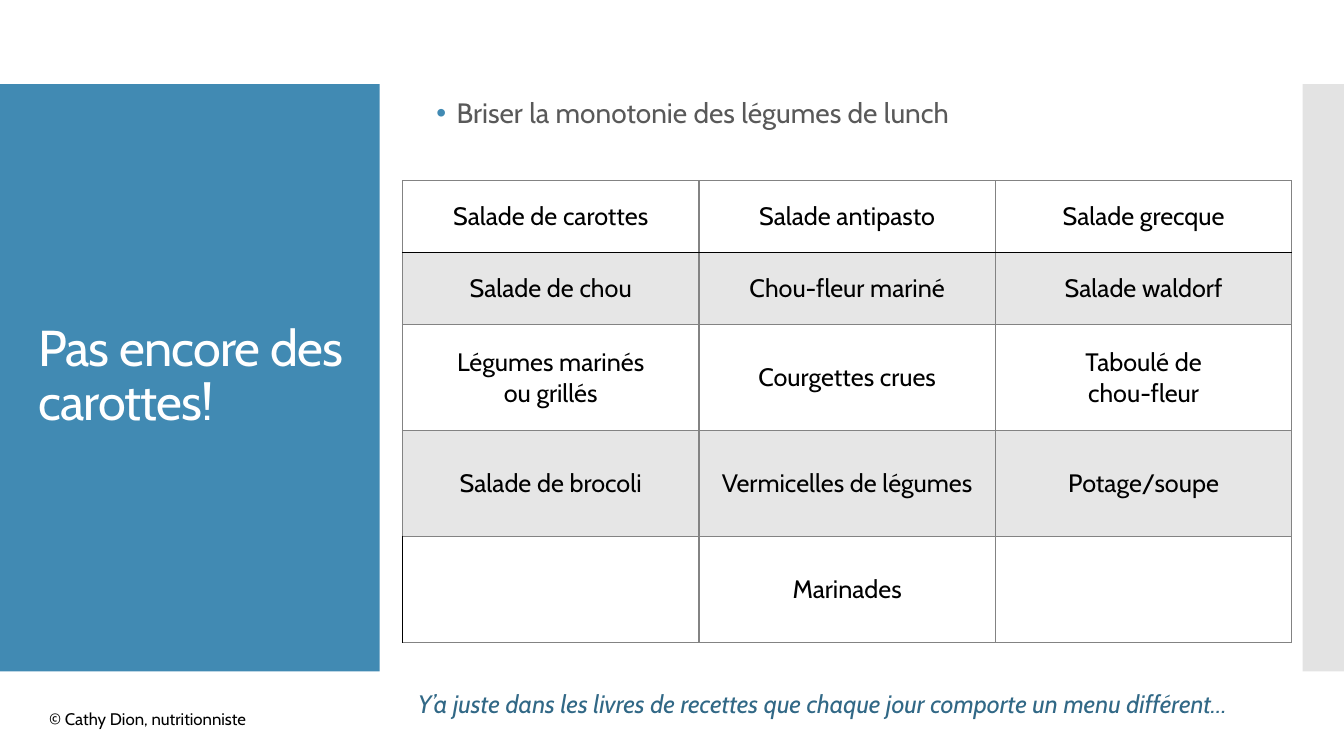
from lxml import etree
from pptx import Presentation
from pptx import util as u
from pptx.dml import color
from pptx.enum import shapes, text
from pptx.oxml import ns

BLUE, GREY, PALE, BLACK = "418AB3", "838383", "E6E6E6", "000000"


def tint(code):
    return color.RGBColor.from_string(code)


class Sheet:
    """Holds the style and the current slide."""

    font = "Cabin"

    def __init__(self, deck):
        self.slide = deck.slides.add_slide(deck.slide_layouts[1])

    def place(self, shape, *box):
        shape.left, shape.top, shape.width, shape.height = map(u.Pt, box)

    def style(self, frame, size, code, italic=False):
        for para in frame.paragraphs:
            for run in para.runs:
                run.font.name, run.font.size = self.font, u.Pt(size)
                run.font.color.rgb, run.font.italic = tint(code), italic

    def panel(self, code, *box):
        shape = self.slide.shapes.add_shape(
            shapes.MSO_SHAPE.RECTANGLE, *map(u.Pt, box))
        shape.shadow.inherit = False
        shape.fill.solid()
        shape.fill.fore_color.rgb = tint(code)
        shape.line.fill.background()
        shape.element.getparent().insert(2, shape.element)

    def holder(self, shape, words, size, code, anchor, *box):
        self.place(shape, *box)
        frame = shape.text_frame
        frame.text = words
        frame.auto_size = text.MSO_AUTO_SIZE.NONE
        frame.vertical_anchor = anchor
        para = frame.paragraphs[0]
        para.line_spacing, para.space_before = 0.9, u.Pt(0)
        para.alignment = text.PP_ALIGN.LEFT
        self.style(frame, size, code)
        return para

    def title(self, words, *box):
        para = self.holder(self.slide.shapes.title, words, 36, "FFFFFF",
                           text.MSO_ANCHOR.MIDDLE, *box)
        para.runs[0].font._element.set("spc", "-60")

    def bullet(self, words, *box):
        para = self.holder(self.slide.placeholders[1], words, 20, "595959",
                           text.MSO_ANCHOR.TOP, *box)
        props = para._p.get_or_add_pPr()
        props.set("marL", str(u.Pt(14.4)))
        props.set("indent", str(u.Pt(-14.4)))
        hue = etree.SubElement(props, ns.qn("a:buClr"))
        etree.SubElement(hue, ns.qn("a:srgbClr"), val=BLUE)
        etree.SubElement(props, ns.qn("a:buChar"), char="•")

    def note(self, words, size, code, italic, *box):
        frame = self.slide.shapes.add_textbox(*map(u.Pt, box)).text_frame
        frame.word_wrap = True
        frame.text = words
        self.style(frame, size, code, italic)

    def edge(self, cell, **hues):
        props = cell._tc.get_or_add_tcPr()
        for side in "LRTB":
            line = etree.SubElement(props, ns.qn("a:ln" + side),
                                    w=str(u.Pt(1)))
            fill = etree.SubElement(line, ns.qn("a:solidFill"))
            etree.SubElement(fill, ns.qn("a:srgbClr"),
                             val=hues.get(side, GREY))

    def table(self, rows, heights, *box):
        grid = self.slide.shapes.add_table(
            len(rows), len(rows[0]), *map(u.Pt, box)).table
        grid.first_row = grid.horz_banding = False
        for r, row in enumerate(rows):
            grid.rows[r].height = u.Pt(heights[r])
            for c, words in enumerate(row):
                cell = grid.cell(r, c)
                hues = {0: {"B": BLACK}, 1: {"T": BLACK}}.get(r, {})
                if r == len(rows) - 1 and c == 0:
                    hues = {"L": BLACK}
                self.edge(cell, **hues)
                if r % 2:
                    cell.fill.solid()
                    cell.fill.fore_color.rgb = tint(PALE)
                else:
                    cell.fill.background()
                cell.vertical_anchor = text.MSO_ANCHOR.MIDDLE
                cell.text_frame.text = words
                for para in cell.text_frame.paragraphs:
                    para.alignment = text.PP_ALIGN.CENTER
                self.style(cell.text_frame, 18, BLACK)


def main():
    deck = Presentation()
    deck.slide_width, deck.slide_height = u.Pt(960), u.Pt(540)
    sheet = Sheet(deck)
    sheet.panel("E3E3E3", 930.5, 60, 29.5, 419.5)
    sheet.panel(BLUE, 0, 60, 271.25, 419.5)
    sheet.title("Pas encore des carottes!", 20, 88.5, 232, 362)
    sheet.bullet("Briser la monotonie des légumes de lunch",
                 304.5, 67.5, 576, 50.5)
    rows = [
        ["Salade de carottes", "Salade antipasto", "Salade grecque"],
        ["Salade de chou", "Chou-fleur mariné", "Salade waldorf"],
        ["Légumes marinés\nou grillés", "Courgettes crues",
         "Taboulé de\nchou-fleur"],
        ["Salade de brocoli", "Vermicelles de légumes", "Potage/soupe"],
        ["", "Marinades", ""],
    ]
    sheet.table(rows, [51.5] * 2 + [75.7] * 3, 287.5, 129, 635.25, 330.1)
    sheet.note("Y’a juste dans les livres de recettes que chaque jour "
               "comporte un menu différent…", 18, "316886", True,
               291.5, 488, 632, 29)
    sheet.note("© Cathy Dion, nutritionniste", 12, BLACK, False,
               28, 502.5, 177, 21.8)
    deck.save("out.pptx")


if __name__ == "__main__":
    main()
